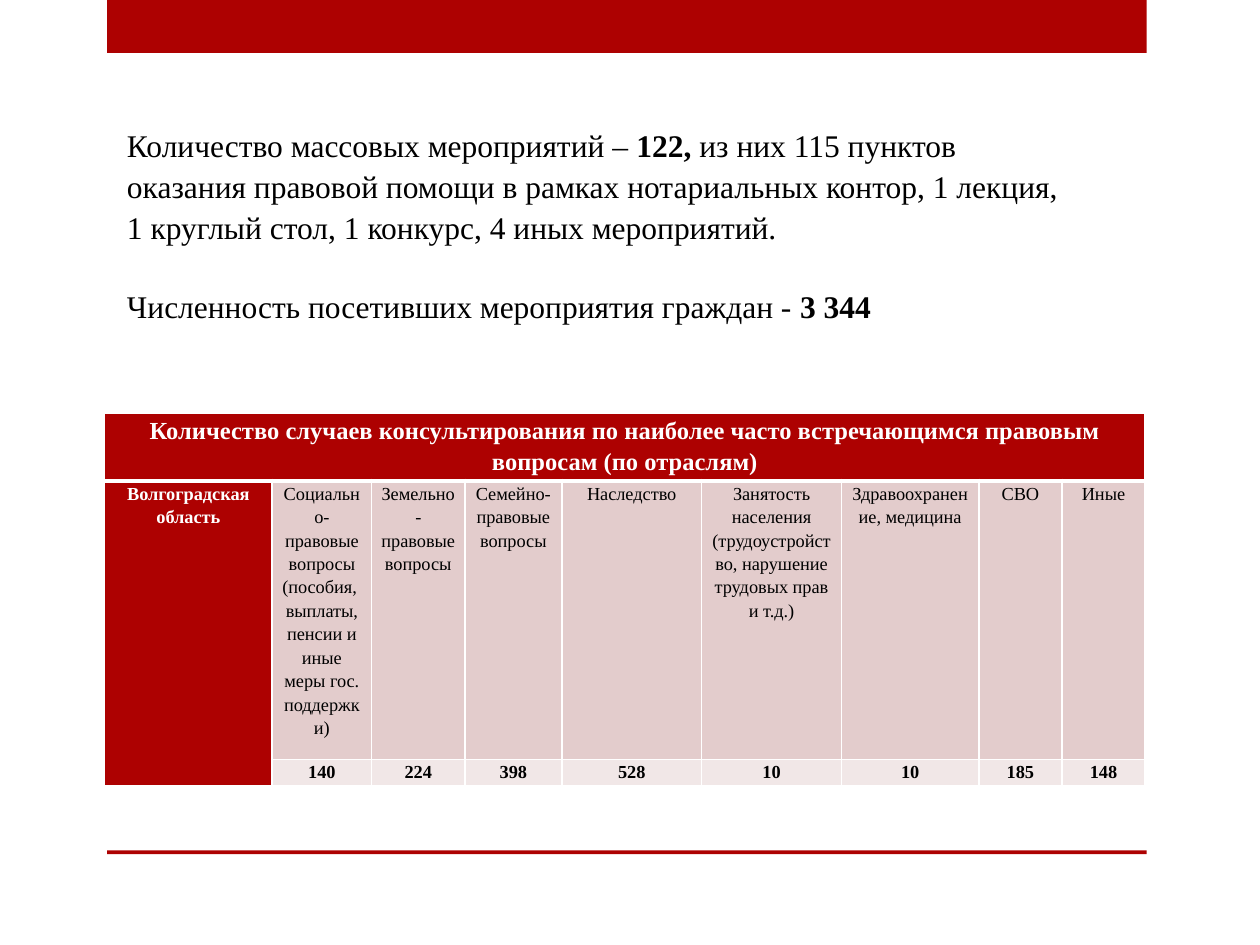
from lxml import etree
from pptx import Presentation
from pptx.dml.color import RGBColor
from pptx.enum.shapes import MSO_SHAPE as Shape
from pptx.enum.text import PP_ALIGN as Align
from pptx.oxml.ns import qn
from pptx.util import Inches, Pt

FONT = "Times New Roman"
COLORS = {
    "red": "AD0101",
    "pink": "E3CCCC",
    "pale": "F1E7E7",
    "white": "FFFFFF",
    "black": "000000",
}

INTRO = [
    [("Количество массовых мероприятий – ", False),
     ("122,", True),
     (" из них 115 пунктов оказания правовой помощи в рамках нотариальных "
      "контор, 1 лекция, 1 круглый стол, 1 конкурс, 4 иных мероприятий.", False)],
    [("Численность посетивших мероприятия граждан - ", False),
     ("3 344", True)],
]

HEADING = ("Количество случаев консультирования по наиболее часто "
           "встречающимся правовым вопросам (по отраслям)")
REGION = "Волгоградская область"
# Topic, number of consultations, column width
TOPICS = [
    ("Социально-правовые вопросы (пособия,  выплаты, пенсии и иные меры "
     "гос. поддержки)", 140, 0.79),
    ("Земельно-правовые вопросы", 224, 0.74),
    ("Семейно-правовые вопросы", 398, 0.77),
    ("Наследство", 528, 1.11),
    ("Занятость населения (трудоустройство, нарушение трудовых прав и т.д.)",
     10, 1.11),
    ("Здравоохранение, медицина", 10, 1.09),
    ("СВО", 185, 0.66),
    ("Иные", 148, 0.66),
]
REGION_WIDTH = 1.33
ROW_HEIGHTS = [0.52, 2.21, 0.21]


def rgb(name):
    return RGBColor.from_string(COLORS[name])


def style_run(run, size, color, bold):
    run.font.name = FONT
    run.font.size = Pt(size)
    run.font.bold = bold
    run.font.color.rgb = rgb(color)


def add_bar(slide, top, height):
    bar = slide.shapes.add_shape(
        Shape.RECTANGLE, Inches(0.85), Inches(top), Inches(8.25), Inches(height))
    bar.shadow.inherit = False
    bar.fill.solid()
    bar.fill.fore_color.rgb = rgb("red")
    bar.line.fill.background()


def add_intro(slide):
    intro = slide.shapes.add_textbox(
        Inches(0.91), Inches(0.92), Inches(7.64), Inches(1.62))
    frame = intro.text_frame
    frame.word_wrap = True
    for index, parts in enumerate(INTRO):
        paragraph = frame.add_paragraph() if index else frame.paragraphs[0]
        paragraph.line_spacing = 1.09
        paragraph.space_before = Pt(21.7 if index else 0)
        for text, bold in parts:
            run = paragraph.add_run()
            run.text = text
            style_run(run, 18, "black", bold)


def set_borders(cell, **widths):
    """Draw white borders, 1 pt unless a side is given another width."""
    properties = cell._tc.get_or_add_tcPr()
    for position, side in enumerate(("lnL", "lnR", "lnT", "lnB")):
        line = etree.Element(qn(f"a:{side}"), w=str(Pt(widths.get(side, 1))))
        fill = etree.SubElement(line, qn("a:solidFill"))
        etree.SubElement(fill, qn("a:srgbClr"), val=COLORS["white"])
        properties.insert(position, line)


def fill_cell(cell, text, fill, color="black", size=10.5, bold=False):
    cell.margin_left = cell.margin_right = Inches(0.06)
    cell.margin_top = cell.margin_bottom = 0
    cell.fill.solid()
    cell.fill.fore_color.rgb = rgb(fill)
    paragraph = cell.text_frame.paragraphs[0]
    paragraph.text = text
    paragraph.alignment = Align.CENTER
    paragraph.line_spacing = 1.15
    for run in paragraph.runs:
        style_run(run, size, color, bold)


def add_consultations(slide):
    widths = [REGION_WIDTH] + [width for _, _, width in TOPICS]
    table = slide.shapes.add_table(
        len(ROW_HEIGHTS), len(widths), Inches(0.83), Inches(3.28),
        Inches(sum(widths)), Inches(sum(ROW_HEIGHTS))).table
    for column, width in zip(table.columns, widths):
        column.width = Inches(width)
    for row, height in zip(table.rows, ROW_HEIGHTS):
        row.height = Inches(height)

    # Heading and region
    heading, region = table.cell(0, 0), table.cell(1, 0)
    heading.merge(table.cell(0, len(TOPICS)))
    region.merge(table.cell(2, 0))
    fill_cell(heading, HEADING, "red", "white", size=14, bold=True)
    fill_cell(region, REGION, "red", "white", bold=True)

    # Topics with their counts
    for column, (topic, count, _) in enumerate(TOPICS, start=1):
        fill_cell(table.cell(1, column), topic, "pink")
        fill_cell(table.cell(2, column), str(count), "pale", bold=True)

    # Grid, with a thicker rule under the heading
    for column in range(len(widths)):
        set_borders(table.cell(0, column), lnB=3)
        set_borders(table.cell(1, column), lnT=3)
        set_borders(table.cell(2, column))


def main():
    deck = Presentation()
    deck.slide_width, deck.slide_height = Inches(10), Inches(7.5)
    slide = deck.slides.add_slide(deck.slide_layouts[6])
    # Top band and bottom rule
    add_bar(slide, 0, 0.42)
    add_bar(slide, 6.75, 0.03)
    add_intro(slide)
    add_consultations(slide)
    deck.save("out.pptx")


if __name__ == "__main__":
    main()
